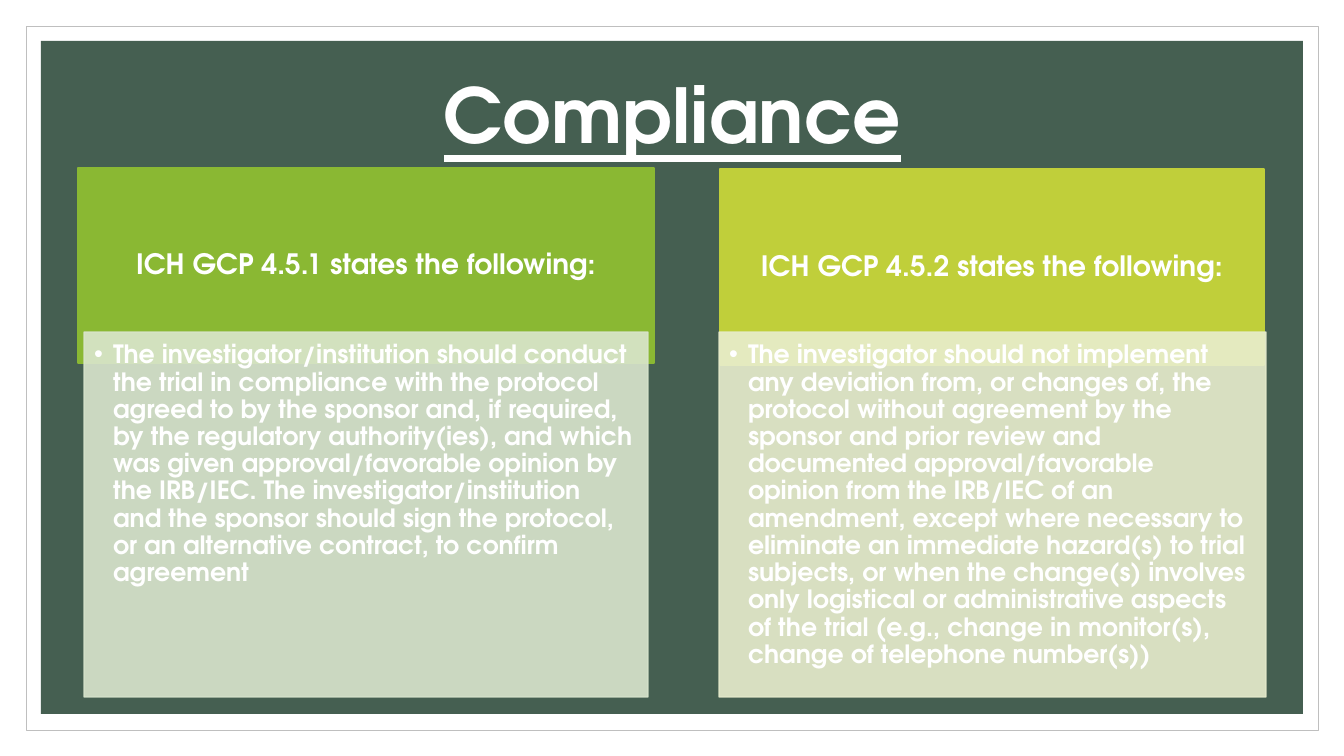
from lxml import etree
from pptx import Presentation
from pptx.dml.color import RGBColor
from pptx.enum.shapes import MSO_SHAPE
from pptx.enum.text import MSO_ANCHOR, MSO_AUTO_SIZE, PP_ALIGN
from pptx.oxml.ns import qn
from pptx.util import Emu, Pt

RECT = MSO_SHAPE.RECTANGLE
TOP, MIDDLE = MSO_ANCHOR.TOP, MSO_ANCHOR.MIDDLE
LEFT, CENTER = PP_ALIGN.LEFT, PP_ALIGN.CENTER
NO_FIT = MSO_AUTO_SIZE.NONE
PX = 914400 / 100.8
FONT = "TeX Gyre Adventor"
WHITE = "FFFFFF"
INDENT = 19

COLUMNS = [
    {
        "head": "ICH GCP 4.5.1 states the following:",
        "head_box": (78, 168, 576, 195),
        "head_color": "8AB833",
        "body": "The investigator/institution should conduct the trial in compliance "
                "with the protocol agreed to by the sponsor and, if required, by the "
                "regulatory authority(ies), and which was given approval/favorable "
                "opinion by the IRB/IEC. The investigator/institution and the sponsor "
                "should sign the protocol, or an alternative contract, to confirm "
                "agreement",
        "body_box": (84, 332, 564, 365),
        "body_color": "DAE6CE",
    },
    {
        "head": "ICH GCP 4.5.2 states the following:",
        "head_box": (720, 169, 544, 196),
        "head_color": "C0CF3A",
        "body": "The investigator should not implement any deviation from, or changes "
                "of, the protocol without agreement by the sponsor and prior review and "
                "documented approval/favorable opinion from the IRB/IEC of an amendment, "
                "except where necessary to eliminate an immediate hazard(s) to trial "
                "subjects, or when the change(s) involves only logistical or "
                "administrative aspects of the trial (e.g., change in monitor(s), change "
                "of telephone number(s))",
        "body_box": (719, 332, 547, 365),
        "body_color": "E8EDCE",
    },
]


def px(n):
    """Turn a pixel length into EMU."""
    return Emu(round(n * PX))


def rgb(value):
    """Turn a hex string into a colour."""
    return RGBColor.from_string(value)


def set_all(obj, values):
    """Set each named attribute of an object."""
    for name, value in values.items():
        setattr(obj, name, value)


def paint(sp, fill, line=None, width=1.0, alpha=100):
    """Fill and outline a shape, with an opacity in percent."""
    sp.fill.solid()
    sp.fill.fore_color.rgb = rgb(fill)
    if line:
        sp.line.color.rgb = rgb(line)
        sp.line.width = Pt(width)
    else:
        sp.line.fill.background()
    if alpha < 100:
        for color in sp._element.spPr.iter(qn("a:srgbClr")):
            etree.SubElement(color, qn("a:alpha"), val=str(alpha * 1000))


def add_rect(slide, box, fill, line=None, width=1.0):
    """Add a flat rectangle."""
    sp = slide.shapes.add_shape(RECT, *map(px, box))
    sp.shadow.inherit = False
    paint(sp, fill, line, width)
    return sp


def place(slide, sp, box):
    """Move a placeholder to a box and bring it to the front."""
    set_all(sp, dict(zip(("left", "top", "width", "height"), map(px, box))))
    slide.shapes._spTree.append(sp._element)


def write(sp, text, size, insets, anchor=MIDDLE, align=CENTER, underline=False):
    """Write one bold white paragraph in a shape."""
    tf = sp.text_frame
    sides = ("margin_left", "margin_top", "margin_right", "margin_bottom")
    set_all(tf, {"word_wrap": True, "auto_size": NO_FIT, "vertical_anchor": anchor,
                 **dict(zip(sides, map(px, insets)))})
    p = tf.paragraphs[0]
    set_all(p, {"alignment": align, "line_spacing": 0.9, "space_before": Pt(0)})
    r = p.add_run()
    r.text = text
    set_all(r.font, {"name": FONT, "size": Pt(size), "bold": True,
                     "underline": underline})
    r.font.color.rgb = rgb(WHITE)
    return p


def add_bullet(p):
    """Give a paragraph a hanging round bullet."""
    pPr = p._p.get_or_add_pPr()
    pPr.set("marL", str(px(INDENT)))
    pPr.set("indent", str(-px(INDENT)))
    etree.SubElement(pPr, qn("a:buChar"), char="•")


def add_column(slide, body, column):
    """Build a heading block with its translucent list panel."""
    head = add_rect(slide, column["head_box"], column["head_color"],
                    column["head_color"])
    write(head, column["head"], 20, (16, 9, 16, 9))
    place(slide, body, column["body_box"])
    paint(body, column["body_color"], column["body_color"], alpha=90)
    add_bullet(write(body, column["body"], 18, (10, 10, 14, 16), TOP, LEFT))


def main():
    """Build the compliance slide."""
    prs = Presentation()
    set_all(prs, {"slide_width": px(1344), "slide_height": px(756)})
    slide = prs.slides.add_slide(prs.slide_layouts[3])
    title, *bodies = slide.placeholders
    add_rect(slide, (26, 26, 1292, 704), WHITE, "BFBFBF", 0.5)
    add_rect(slide, (41, 41, 1262, 673), "455F51")
    place(slide, title, (118, 71, 1109, 97))
    write(title, "Compliance", 54, (10, 5, 10, 5), underline=True)
    for body, column in zip(bodies, COLUMNS):
        add_column(slide, body, column)
    prs.save("out.pptx")


if __name__ == "__main__":
    main()
